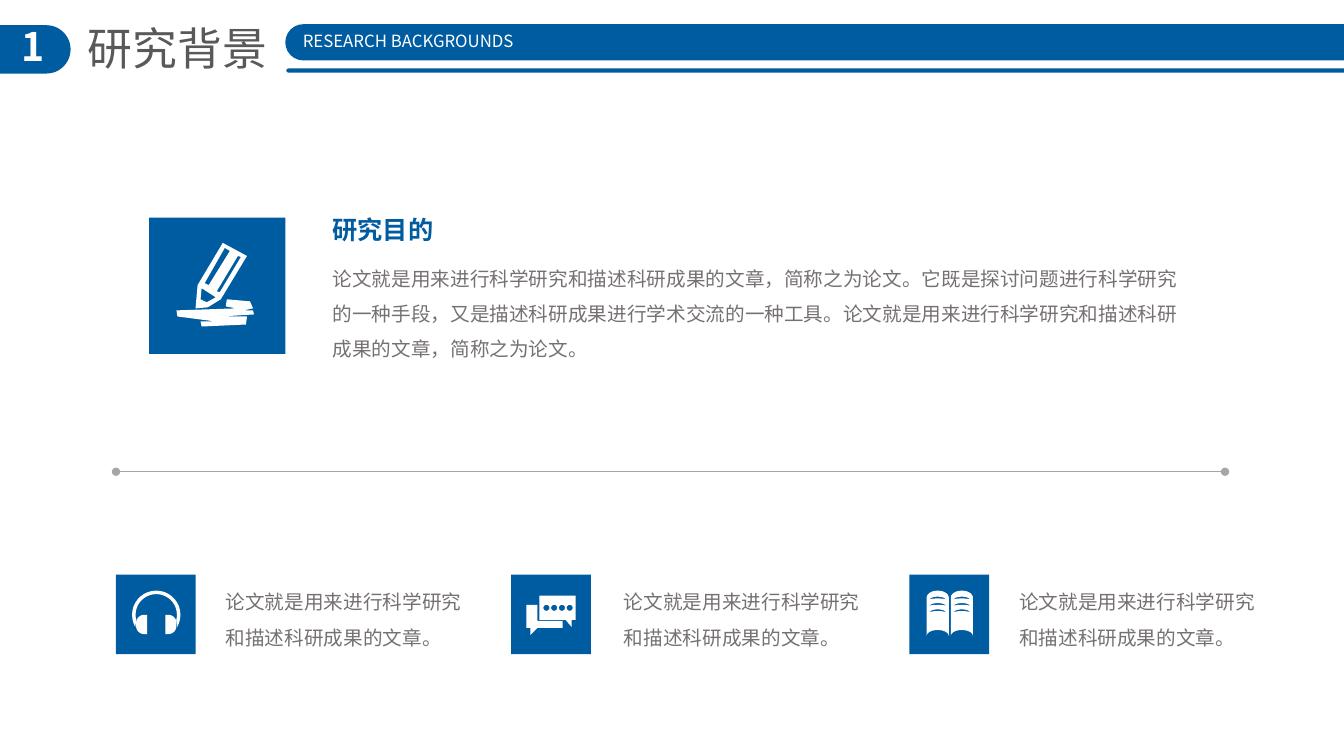
from math import cos, radians, sin

from lxml import etree
from pptx import Presentation
from pptx.dml.color import RGBColor
from pptx.enum import shapes, text
from pptx.oxml import ns
from pptx.util import Inches, Pt

FONT = "Noto Sans CJK SC"
COLORS = {
    "blue": "005CA1",
    "white": "FFFFFF",
    "title": "595959",
    "body": "767171",
    "rule": "A6A6A6",
}
PURPOSE = (
    "论文就是用来进行科学研究和描述科研成果的文章，简称之为论文。"
    "它既是探讨问题进行科学研究的一种手段，又是描述科研成果进行学术交流的一种工具。"
    "论文就是用来进行科学研究和描述科研成果的文章，简称之为论文。"
)
POINT = "论文就是用来进行科学研究和描述科研成果的文章。"


def color(name):
    return RGBColor.from_string(COLORS[name])


def arc(cx, cy, rx, ry, start, end, steps=24):
    angles = [radians(start + (end - start) * i / steps) for i in range(steps + 1)]
    return [(cx + rx * cos(a), cy + ry * sin(a)) for a in angles]


def mirror(points, axis):
    return [(2 * axis - x, y) for x, y in points]


def pencil_icon():
    pencil = [(73, 25), (97, 38), (71, 81), (58, 89), (46, 90), (48, 67)]
    paper = [
        (96, 106), (97, 98), (72, 98), (104, 96), (103, 92), (94, 92),
        (103, 90), (100, 83), (77, 81), (76, 88), (86, 90), (27, 92),
        (28, 98), (66, 103), (51, 103), (52, 108),
    ]
    tip = [(57, 84), (66, 79), (52, 70), (51, 81)]
    narrow_stripe = [(88, 38), (67, 73), (70, 74), (91, 39)]
    wide_stripe = [(75, 30), (55, 65), (59, 67), (80, 33)]
    return [[pencil, paper, tip, narrow_stripe, wide_stripe]]


def headphones_icon():
    band = arc(40, 40, 24, 24, 150, 390) + arc(40, 40, 20.5, 20.5, 375, 165)
    cup = [(31, 40)] + arc(28, 48, 8, 8, 270, 180) + arc(28, 51, 8, 8, 180, 90) + [(31, 59)]
    return [[band], [cup], [mirror(cup, 40)]]


def chat_icon():
    back = [
        (19, 60), (26, 53), (51, 53), (51, 46), (26, 46),
        (26, 30), (15, 30), (15, 53), (19, 53),
    ]
    front = [(54, 45), (60, 52), (60, 45), (64, 45), (64, 21), (28, 21), (28, 45)]
    dots = [arc(35 + 7.7 * i, 33, 3, 3, 0, 360) for i in range(4)]
    return [[back], [front] + dots]


def book_icon():
    page = [arc(28, 61, 11, 6, 180, 360) + arc(28, 23, 11, 7, 360, 180)]
    for i in range(3):
        y = 25 + 6.3 * i
        page.append(arc(28, y, 8, 3, 190, 350) + arc(28, y, 8, 1.3, 350, 190))
    return [page, [mirror(contour, 40) for contour in page]]


def write(tf, content, size, name, bold=False, align=text.PP_ALIGN.LEFT,
          wrap=True, spacing=1.0, margins=(0.1, 0.05)):
    tf.word_wrap = wrap
    tf.auto_size = text.MSO_AUTO_SIZE.SHAPE_TO_FIT_TEXT
    tf.vertical_anchor = text.MSO_ANCHOR.TOP
    tf.margin_left = tf.margin_right = Inches(margins[0])
    tf.margin_top = tf.margin_bottom = Inches(margins[1])
    p = tf.paragraphs[0]
    p.alignment = align
    p.line_spacing = spacing
    r = p.add_run()
    r.text = content
    r.font.size = Pt(size)
    r.font.bold = bold
    r.font.color.rgb = color(name)
    r.font.name = FONT
    etree.SubElement(r._r.get_or_add_rPr(), ns.qn("a:ea"), typeface=FONT)


def add_text(s, box, content, size, name, **options):
    tb = s.shapes.add_textbox(*map(Inches, box))
    write(tb.text_frame, content, size, name, **options)


def paint(sp, name):
    sp.shadow.inherit = False
    sp.fill.solid()
    sp.fill.fore_color.rgb = color(name)
    sp.line.fill.background()


def add_block(s, kind, box):
    sp = s.shapes.add_shape(kind, *map(Inches, box))
    paint(sp, "blue")
    if kind == shapes.MSO_SHAPE.ROUNDED_RECTANGLE:
        sp.adjustments[0] = 0.5


def add_tile(s, left, top, size, icon):
    add_block(s, shapes.MSO_SHAPE.RECTANGLE, (left, top, size, size))
    for part in icon:
        builder = None
        for contour in part:
            points = [(left * 1000 + x * 10, top * 1000 + y * 10) for x, y in contour]
            if builder is None:
                builder = s.shapes.build_freeform(*points[0], scale=Inches(1) / 1000)
            else:
                builder.move_to(*points[0])
            builder.add_line_segments(points[1:], close=True)
        paint(builder.convert_to_shape(), "white")


def add_header(s, left, top):
    pill = shapes.MSO_SHAPE.ROUNDED_RECTANGLE
    add_block(s, pill, (left - 0.28, top + 0.25, 0.98, 0.48))
    add_text(s, (left + 0.07, top + 0.22, 0.51, 0.57), "1", 28, "white", bold=True,
             align=text.PP_ALIGN.CENTER, margins=(0, 0))
    title = s.shapes.title
    title.left, title.top, title.width, title.height = map(
        Inches, (left + 0.77, top + 0.16, 2, 0.64))
    write(title.text_frame, "研究背景", 32, "title", wrap=False)
    add_block(s, pill, (left + 2.83, top + 0.24, 11.03, 0.36))
    add_block(s, pill, (left + 2.84, top + 0.68, 11.03, 0.04))
    add_text(s, (left + 2.85, top + 0.26, 2.4, 0.3), "RESEARCH BACKGROUNDS", 12, "white",
             align=text.PP_ALIGN.CENTER, wrap=False)


def add_purpose(s, left, top):
    add_tile(s, left, top, 1.35, pencil_icon())
    add_text(s, (left + 1.72, top - 0.08, 1.21, 0.4), "研究目的", 18, "blue",
             bold=True, wrap=False)
    add_text(s, (left + 1.72, top + 0.32, 8.65, 1.12), PURPOSE, 14, "body", spacing=1.5)


def add_divider(s, left, top, width):
    line = s.shapes.add_connector(
        shapes.MSO_CONNECTOR.STRAIGHT, *map(Inches, (left, top, left + width, top)))
    line.line.color.rgb = color("rule")
    line.line.width = Pt(0.5)
    ln = line.line._get_or_add_ln()
    for end in ("a:headEnd", "a:tailEnd"):
        etree.SubElement(ln, ns.qn(end), type="oval")
    etree.SubElement(line._element.spPr, ns.qn("a:effectLst"))


def add_point(s, left, top, text_left, text_width, icon):
    add_tile(s, left, top, 0.79, icon)
    add_text(s, (text_left, top - 0.01, text_width, 0.81), POINT, 14, "body", spacing=1.5)


def main():
    prs = Presentation()
    prs.slide_width, prs.slide_height = Inches(13.33), Inches(7.5)
    s = prs.slides.add_slide(prs.slide_layouts[5])
    add_header(s, 0, 0)
    add_purpose(s, 1.48, 2.16)
    add_divider(s, 1.15, 4.68, 11)
    points = [
        (1.15, 2.14, 2.71, headphones_icon()),
        (5.07, 6.09, 2.57, chat_icon()),
        (9.02, 10.01, 2.62, book_icon()),
    ]
    for left, text_left, text_width, icon in points:
        add_point(s, left, 5.7, text_left, text_width, icon)
    prs.save("out.pptx")


if __name__ == "__main__":
    main()
